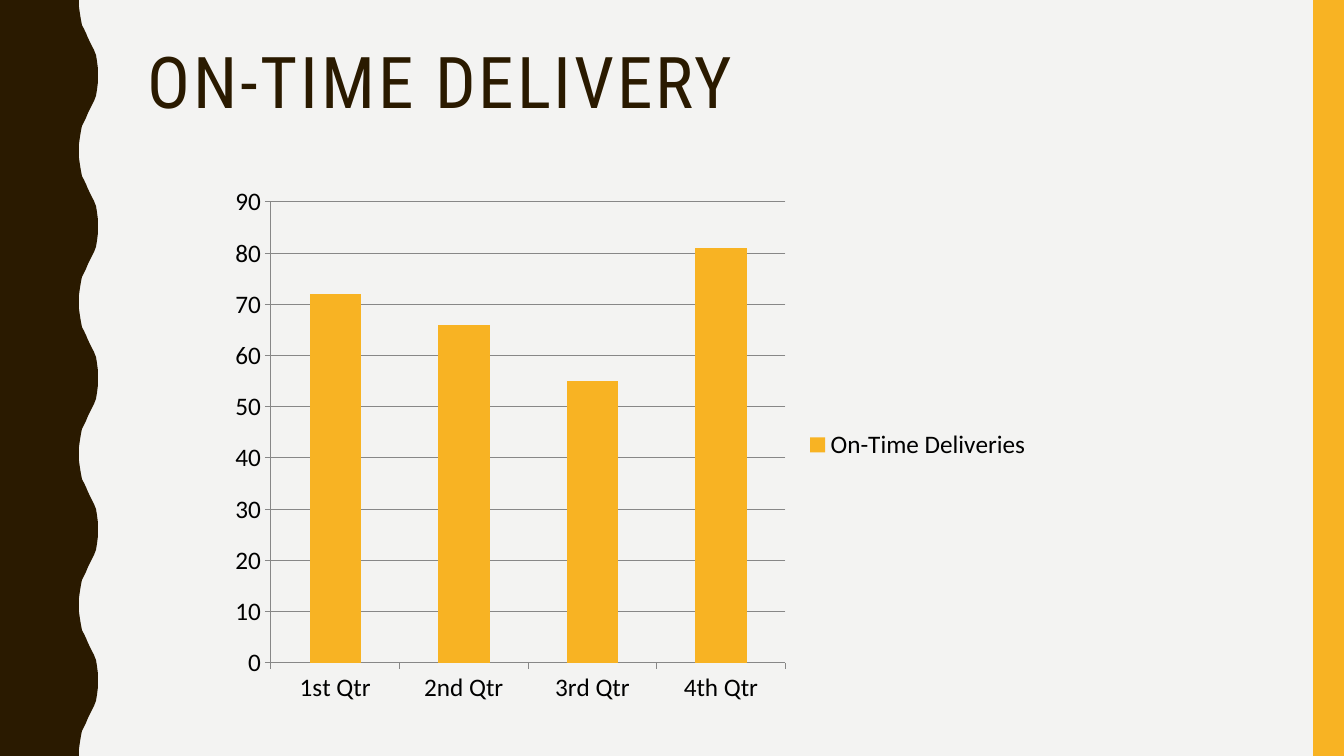
"""Build the on-time delivery slide with a wavy edge and a column chart."""
from pptx import Presentation
from pptx.chart.data import CategoryChartData
from pptx.dml.color import RGBColor
from pptx.enum.chart import XL_CHART_TYPE, XL_LEGEND_POSITION, XL_TICK_MARK
from pptx.enum.shapes import MSO_SHAPE
from pptx.enum.text import MSO_ANCHOR
from pptx.util import Pt

PX = 914400 / 100.8
WIDE, HIGH = 1344, 756
BROWN, GOLD, PALE, GRAY, BLACK = "2A1A00", "F8B323", "F3F3F2", "878787", "000000"


def px(num):
    return round(num * PX)


def paint(fill, color):
    fill.solid()
    fill.fore_color.rgb = RGBColor.from_string(color)


deck = Presentation()
deck.slide_width, deck.slide_height = px(WIDE), px(HIGH)
slide = deck.slides.add_slide(deck.slide_layouts[6])
paint(slide.background.fill, PALE)
shapes = slide.shapes

rise = [(79, 0), (79, 7), (80, 14), (81, 20), (82, 25), (84, 29), (86, 33), (88, 38),
        (90, 42), (92, 46), (94, 50), (96, 55), (97, 61), (98, 69), (98, 76)]
waves = 5
step = HIGH / waves
turn = rise + [(x, step - y) for x, y in rise[-2:0:-1]]
edge = [(x, y + step * wave) for wave in range(waves) for x, y in turn]
pen = shapes.build_freeform(0, 0, scale=PX)
pen.add_line_segments(edge + [(79, HIGH), (0, HIGH)], close=True)
wavy = pen.convert_to_shape()
band = shapes.add_shape(MSO_SHAPE.RECTANGLE, px(1313), 0, px(31), px(HIGH))
for shape, color in ((wavy, BROWN), (band, GOLD)):
    paint(shape.fill, color)
    shape.line.fill.background()
    shape.shadow.inherit = False

title = shapes.add_textbox(px(138), px(42), px(1122), px(164)).text_frame
title.word_wrap = True
title.vertical_anchor = MSO_ANCHOR.TOP
para = title.paragraphs[0]
para.line_spacing = 0.9
run = para.add_run()
run.text = "ON-TIME DELIVERY"
run.font.name = "Roboto Condensed"
run.font.size = Pt(51)
run.font.color.rgb = RGBColor.from_string(BROWN)
run.font._element.set("spc", "200")

data = CategoryChartData()
data.categories = ["1st Qtr", "2nd Qtr", "3rd Qtr", "4th Qtr"]
data.add_series("On-Time Deliveries", [72, 66, 55, 81])
chart = shapes.add_chart(XL_CHART_TYPE.COLUMN_STACKED, px(219), px(176),
                         px(823), px(538), data).chart
chart.has_title = False
chart.font.name = "Calibri"
chart.font.size = Pt(18)
chart.font.color.rgb = RGBColor.from_string(BLACK)
chart.has_legend = True
chart.legend.position = XL_LEGEND_POSITION.RIGHT
chart.legend.include_in_layout = False

plot = chart.plots[0]
plot.gap_width, plot.overlap = 150, 100
plot.vary_by_categories = False
paint(plot.series[0].format.fill, GOLD)

scale = chart.value_axis
scale.minimum_scale, scale.maximum_scale, scale.major_unit = 0, 90, 10
scale.has_major_gridlines = True
for axis in (scale, chart.category_axis):
    axis.major_tick_mark = XL_TICK_MARK.OUTSIDE
    axis.minor_tick_mark = XL_TICK_MARK.NONE
for part in (scale, chart.category_axis, scale.major_gridlines):
    paint(part.format.line.fill, GRAY)
    part.format.line.width = Pt(0.75)

deck.save("out.pptx")
